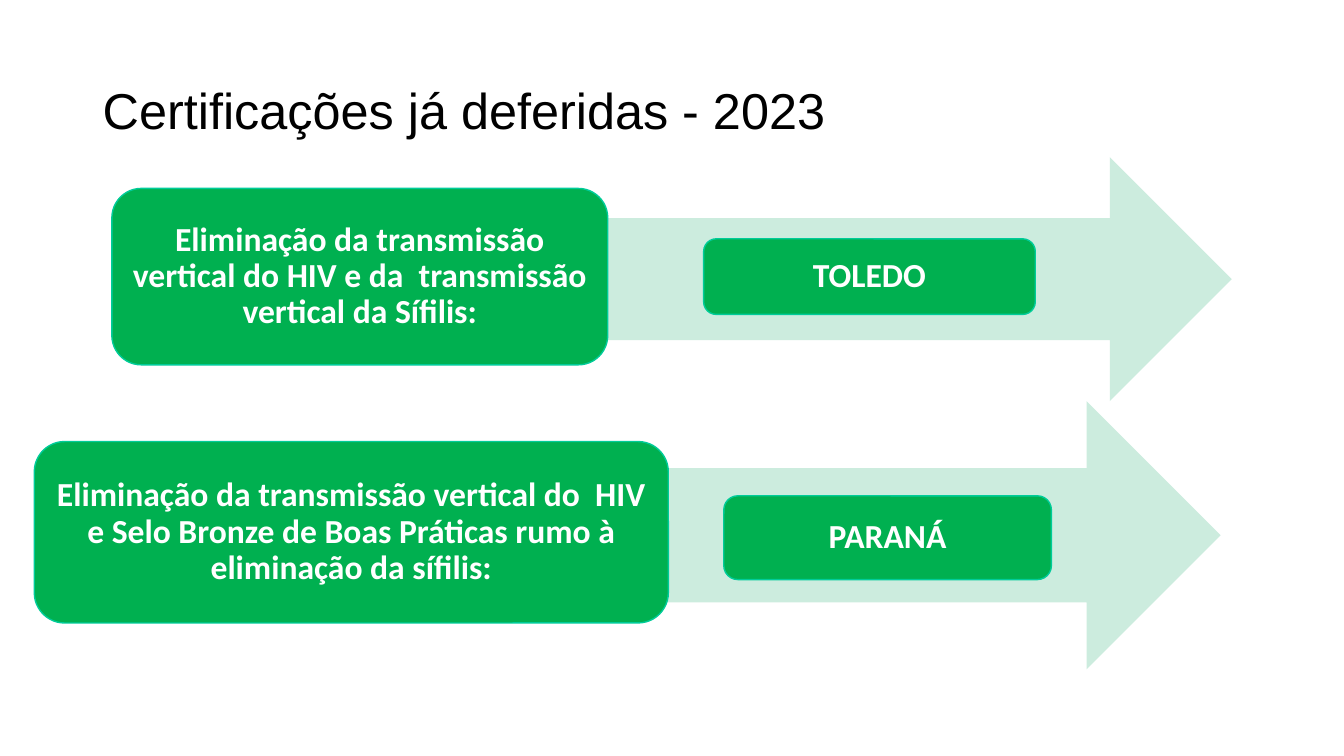
"""Build the slide of certifications granted in 2023."""
import pptx
import pptx.dml.color
import pptx.enum.shapes
import pptx.enum.text
import pptx.util

Pt = pptx.util.Pt
SHAPE = pptx.enum.shapes.MSO_SHAPE
ALIGN = pptx.enum.text.PP_ALIGN
COLORS = {
    "title": "000000",
    "label": "FFFFFF",
    "arrow": "CCECDE",
    "box": "00B050",
    "edge": "00CC99",
}
CERTIFICATIONS = [
    {
        "arrow": (81.4, 112.3, 798.5, 174.2),
        "award": ("Eliminação da transmissão vertical do HIV e da  transmissão "
                  "vertical da Sífilis:", (79.9, 134.6, 354.2, 126)),
        "place": ("TOLEDO", (502.6, 170.6, 236.9, 54)),
    },
    {
        "arrow": (92.9, 286.6, 779, 191.5),
        "award": ("Eliminação da transmissão vertical do  HIV e Selo Bronze de "
                  "Boas Práticas rumo à eliminação da sífilis:",
                  (24.5, 315.4, 452.9, 129.6)),
        "place": ("PARANÁ", (517, 354.2, 234, 59.8)),
    },
]


def rgb(name):
    return pptx.dml.color.RGBColor.from_string(COLORS[name])


def format_text(tf, font, size, color, bold, align):
    tf.word_wrap = True
    tf.auto_size = pptx.enum.text.MSO_AUTO_SIZE.NONE
    tf.vertical_anchor = pptx.enum.text.MSO_ANCHOR.MIDDLE
    p = tf.paragraphs[0]
    p.alignment = align
    p.line_spacing = 0.9
    p.font.name = font
    p.font.size = Pt(size)
    p.font.bold = bold
    p.font.color.rgb = rgb(color)


def add_title(s, text, box):
    sp = s.shapes.title
    sp.left, sp.top, sp.width, sp.height = map(Pt, box)
    sp.text_frame.text = text
    format_text(sp.text_frame, "Arial", 36, "title", False, ALIGN.LEFT)


def add_filled(s, kind, box, color):
    sp = s.shapes.add_shape(kind, *map(Pt, box))
    sp.shadow.inherit = False
    sp.fill.solid()
    sp.fill.fore_color.rgb = rgb(color)
    sp.line.fill.background()
    return sp


def add_label(s, text, box):
    sp = add_filled(s, SHAPE.ROUNDED_RECTANGLE, box, "box")
    sp.line.color.rgb = rgb("edge")
    sp.line.width = Pt(1)
    tf = sp.text_frame
    tf.margin_left = tf.margin_right = Pt(7.2)
    tf.margin_top = tf.margin_bottom = Pt(7.2)
    tf.text = text
    format_text(tf, "Calibri", 24, "label", True, ALIGN.CENTER)


def main():
    prs = pptx.Presentation()
    prs.slide_width, prs.slide_height = Pt(960), Pt(540)
    s = prs.slides.add_slide(prs.slide_layouts[5])
    add_title(s, "Certificações já deferidas - 2023", (66.2, 28.8, 827.3, 103.7))
    for item in CERTIFICATIONS:
        add_filled(s, SHAPE.RIGHT_ARROW, item["arrow"], "arrow")
        add_label(s, *item["award"])
        add_label(s, *item["place"])
    prs.save("out.pptx")


if __name__ == "__main__":
    main()
